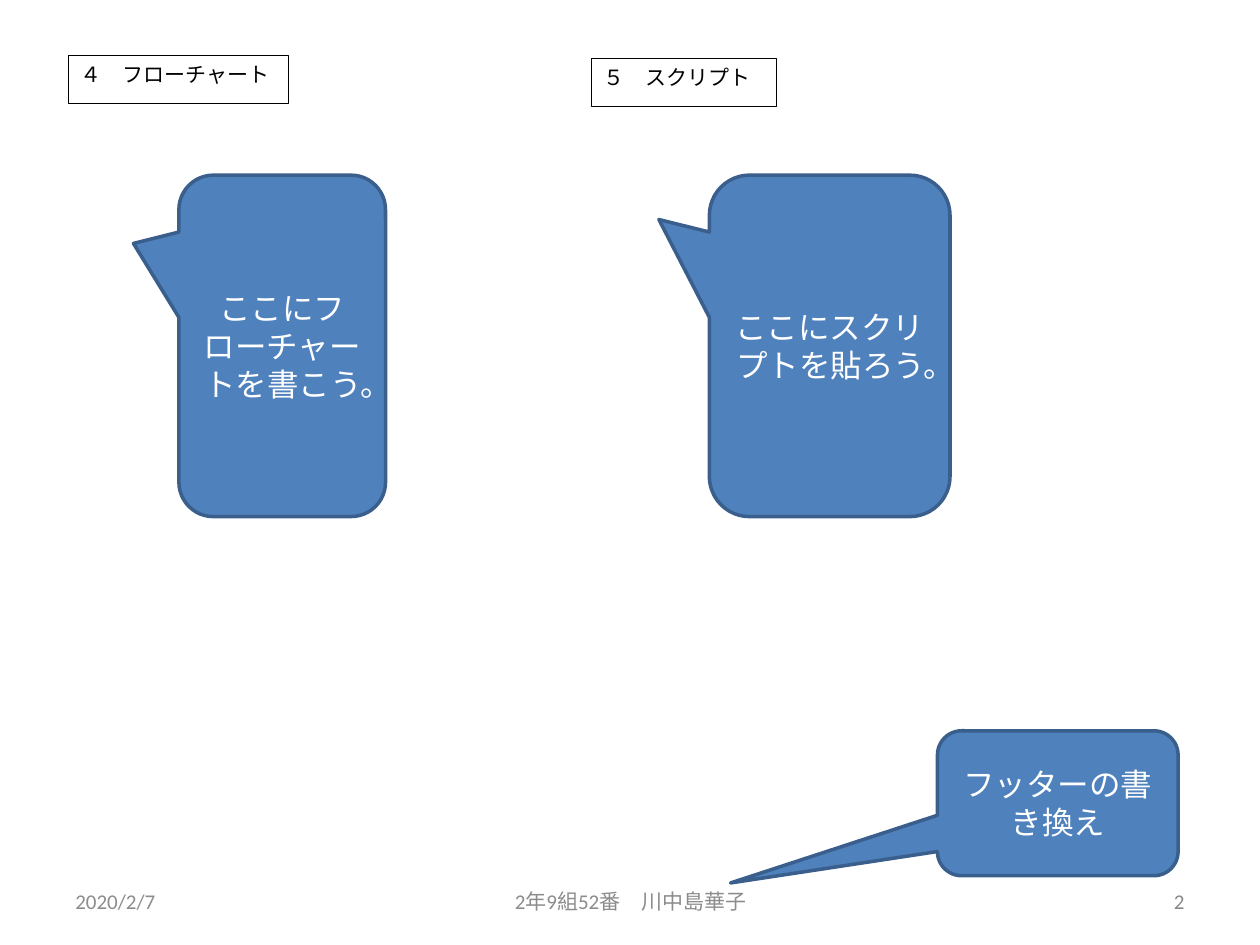
"""Build the worksheet slide with flowchart and script areas and a footer."""
from pptx import Presentation
from pptx import util as u
from pptx.dml.color import RGBColor
from pptx.enum import shapes, text

LEFT, CENTER, RIGHT = text.PP_ALIGN.LEFT, text.PP_ALIGN.CENTER, text.PP_ALIGN.RIGHT
TOP, MIDDLE = text.MSO_ANCHOR.TOP, text.MSO_ANCHOR.MIDDLE

FOOTERS = [
    ("2020/2/7", (0.5, 6.95, 2.33, 0.4), LEFT, "8C8C8C"),
    ("2年9組52番　川中島華子", (3.42, 6.95, 3.17, 0.4), CENTER, "8C8C8C"),
    ("2", (7.17, 6.95, 2.33, 0.4), RIGHT, "898989"),
]
LABELS = [
    ("５　スクリプト", (4.69, 0.46, 1.47, 0.38)),
    ("４　フローチャート", (0.54, 0.44, 1.75, 0.38)),
]
CALLOUTS = [
    ("ここにフローチャートを書こう。", (1.42, 1.39, 1.64, 2.71), (-0.72, -0.3)),
    ("ここにスクリプトを貼ろう。", (5.63, 1.39, 1.91, 2.71), (-0.71, -0.37)),
    ("フッターの書き換え", (7.44, 5.8, 1.91, 1.15), (-1.36, 0.55)),
]


def color(value):
    return RGBColor.from_string(value)


def write(shape, words, size, font_color, alignment, anchor):
    frame = shape.text_frame
    frame.word_wrap = True
    frame.vertical_anchor = anchor
    paragraph = frame.paragraphs[0]
    paragraph.alignment = alignment
    run = paragraph.add_run()
    run.text = words
    run.font.name = "Calibri"
    run.font.size = u.Pt(size)
    run.font.color.rgb = color(font_color)


def add_box(slide, kind, box, fill, line, width):
    shape = slide.shapes.add_shape(kind, *map(u.Inches, box))
    shape.shadow.inherit = False
    shape.fill.solid()
    shape.fill.fore_color.rgb = color(fill)
    shape.line.color.rgb = color(line)
    shape.line.width = u.Pt(width)
    return shape


def main():
    presentation = Presentation()
    presentation.slide_width, presentation.slide_height = u.Inches(10), u.Inches(7.5)
    slide = presentation.slides.add_slide(presentation.slide_layouts[6])

    for words, box, alignment, font_color in FOOTERS:
        footer = slide.shapes.add_textbox(*map(u.Inches, box))
        write(footer, words, 12, font_color, alignment, MIDDLE)

    for words, box in LABELS:
        label = add_box(slide, shapes.MSO_SHAPE.RECTANGLE, box, "FFFFFF", "000000", 0.25)
        write(label, words, 12, "000000", LEFT, TOP)

    for words, box, tip in CALLOUTS:
        callout = add_box(slide, shapes.MSO_SHAPE.ROUNDED_RECTANGULAR_CALLOUT, box,
                          "4F81BD", "3A5F8C", 2)
        callout.adjustments[0], callout.adjustments[1] = tip
        write(callout, words, 18, "FFFFFF", CENTER, MIDDLE)

    presentation.save("out.pptx")


if __name__ == "__main__":
    main()
